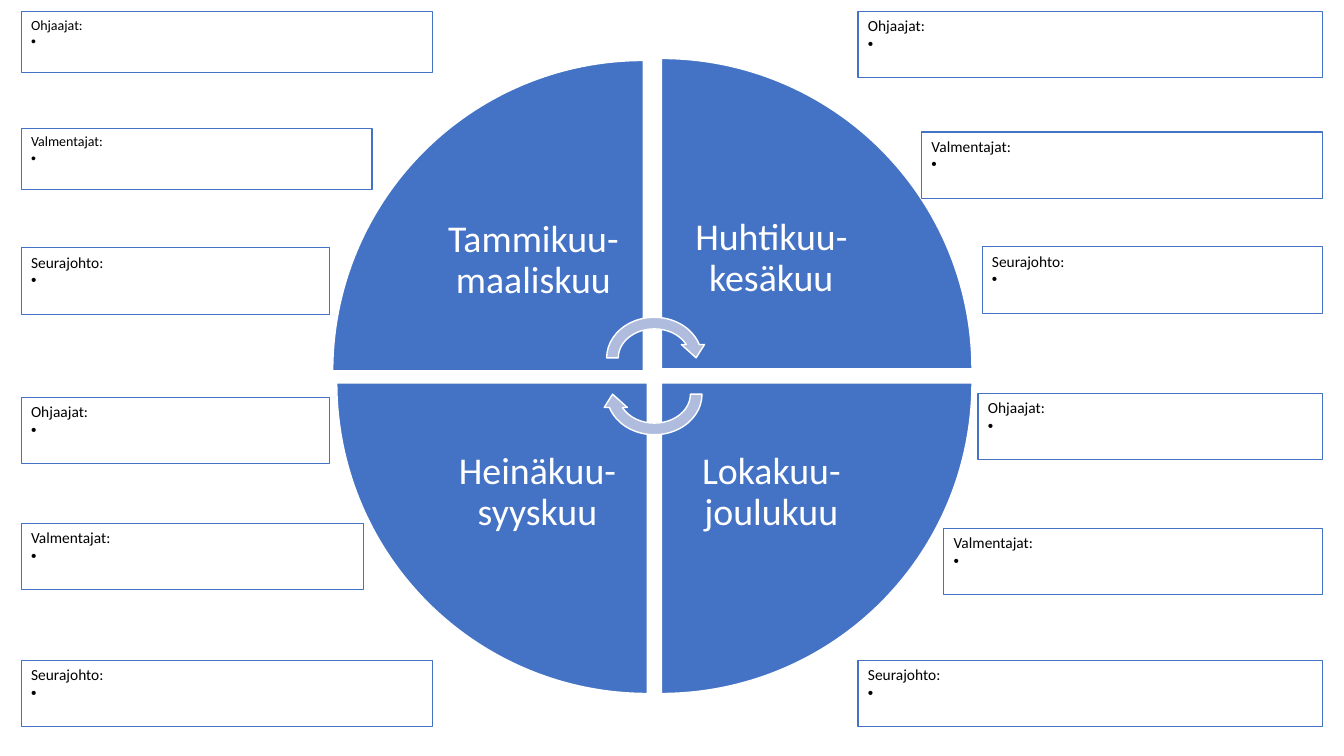
from lxml import etree
from pptx import Presentation
from pptx.dml.color import RGBColor
from pptx.enum.shapes import MSO_SHAPE as Shape
from pptx.enum.text import MSO_ANCHOR as Anchor, PP_ALIGN as Align
from pptx.oxml.ns import qn
from pptx.util import Inches, Pt

BLUE = RGBColor(0x44, 0x72, 0xC4)
PALE = RGBColor(0xB0, 0xBC, 0xDE)
WHITE = RGBColor(0xFF, 0xFF, 0xFF)
BLACK = RGBColor(0, 0, 0)
FONT = "Calibri"

# name, left, top, rotation, label offset x, label offset y
WEDGE, LABEL = 3.08, 2.18
INNER = WEDGE - LABEL
QUARTERS = [
    ("Tammikuu-maaliskuu", 3.3, 0.6, 0, INNER, INNER),
    ("Huhtikuu-kesäkuu", 6.56, 0.58, 90, 0, INNER),
    ("Lokakuu-joulukuu", 6.56, 3.8, 180, 0, 0),
    ("Heinäkuu-syyskuu", 3.34, 3.8, 270, INNER, 0),
]
ARROWS = [(3.09, 0), (3.45, 180)]

LEFT_EDGE, RIGHT_EDGE = 0.21, 13.12
HEIGHTS = {10: 0.61, 11: 0.66}
# role, top, inner edge, text size
LEFT_NOTES = [
    ("Ohjaajat:", 0.11, 4.29, 10),
    ("Valmentajat:", 1.27, 3.69, 10),
    ("Seurajohto:", 2.46, 3.27, 11),
    ("Ohjaajat:", 3.94, 3.27, 11),
    ("Valmentajat:", 5.19, 3.61, 11),
    ("Seurajohto:", 6.55, 4.29, 11),
]
RIGHT_NOTES = [
    ("Ohjaajat:", 0.11, 8.51, 11),
    ("Valmentajat:", 1.31, 9.14, 11),
    ("Seurajohto:", 2.45, 9.74, 11),
    ("Ohjaajat:", 3.9, 9.7, 11),
    ("Valmentajat:", 5.24, 9.36, 11),
    ("Seurajohto:", 6.55, 8.51, 11),
]


def add_figure(page, kind, left, top, width, height, fill, line, weight):
    figure = page.shapes.add_shape(
        kind, Inches(left), Inches(top), Inches(width), Inches(height))
    figure.shadow.inherit = False
    if fill is None:
        figure.fill.background()
    else:
        figure.fill.solid()
        figure.fill.fore_color.rgb = fill
    figure.line.color.rgb = line
    figure.line.width = Pt(weight)
    return figure


def style(para, size, color):
    for span in para.runs:
        span.font.name = FONT
        span.font.size = Pt(size)
        span.font.color.rgb = color


def add_bullet(para):
    props = para._p.get_or_add_pPr()
    props.set("marL", str(Inches(0.19)))
    props.set("indent", str(-Inches(0.19)))
    etree.SubElement(props, qn("a:buFont")).set("typeface", "Arial")
    etree.SubElement(props, qn("a:buChar")).set("char", "•")


def add_quarter(page, name, left, top, rotation, shift_x, shift_y):
    wedge = add_figure(page, Shape.PIE_WEDGE, left, top, WEDGE, WEDGE, BLUE, WHITE, 1)
    wedge.rotation = rotation
    label = page.shapes.add_textbox(
        Inches(left + shift_x), Inches(top + shift_y), Inches(LABEL), Inches(LABEL))
    frame = label.text_frame
    frame.word_wrap = True
    frame.vertical_anchor = Anchor.MIDDLE
    frame.margin_left = frame.margin_right = Inches(0.21)
    frame.margin_top = frame.margin_bottom = Inches(0.21)
    frame.text = name
    para = frame.paragraphs[0]
    para.alignment = Align.CENTER
    para.line_spacing = 0.9
    style(para, 27, WHITE)


def add_note(page, role, left, right, top, size):
    box = add_figure(page, Shape.RECTANGLE, left, top, right - left,
                     HEIGHTS[size], None, BLUE, 0.75)
    frame = box.text_frame
    frame.word_wrap = True
    frame.vertical_anchor = Anchor.TOP
    frame.text = role
    item = frame.add_paragraph()
    item.text = " "
    add_bullet(item)
    for para in frame.paragraphs:
        para.alignment = Align.LEFT
        style(para, size, BLACK)


def main():
    deck = Presentation()
    deck.slide_width, deck.slide_height = Inches(13.33), Inches(7.5)
    page = deck.slides.add_slide(deck.slide_layouts[6])
    for quarter in QUARTERS:
        add_quarter(page, *quarter)
    for top, rotation in ARROWS:
        arrow = add_figure(page, Shape.CIRCULAR_ARROW, 5.96, top, 1.06, 0.92, PALE, WHITE, 1)
        arrow.rotation = rotation
    for role, top, edge, size in LEFT_NOTES:
        add_note(page, role, LEFT_EDGE, edge, top, size)
    for role, top, edge, size in RIGHT_NOTES:
        add_note(page, role, edge, RIGHT_EDGE, top, size)
    deck.save("out.pptx")


if __name__ == "__main__":
    main()
